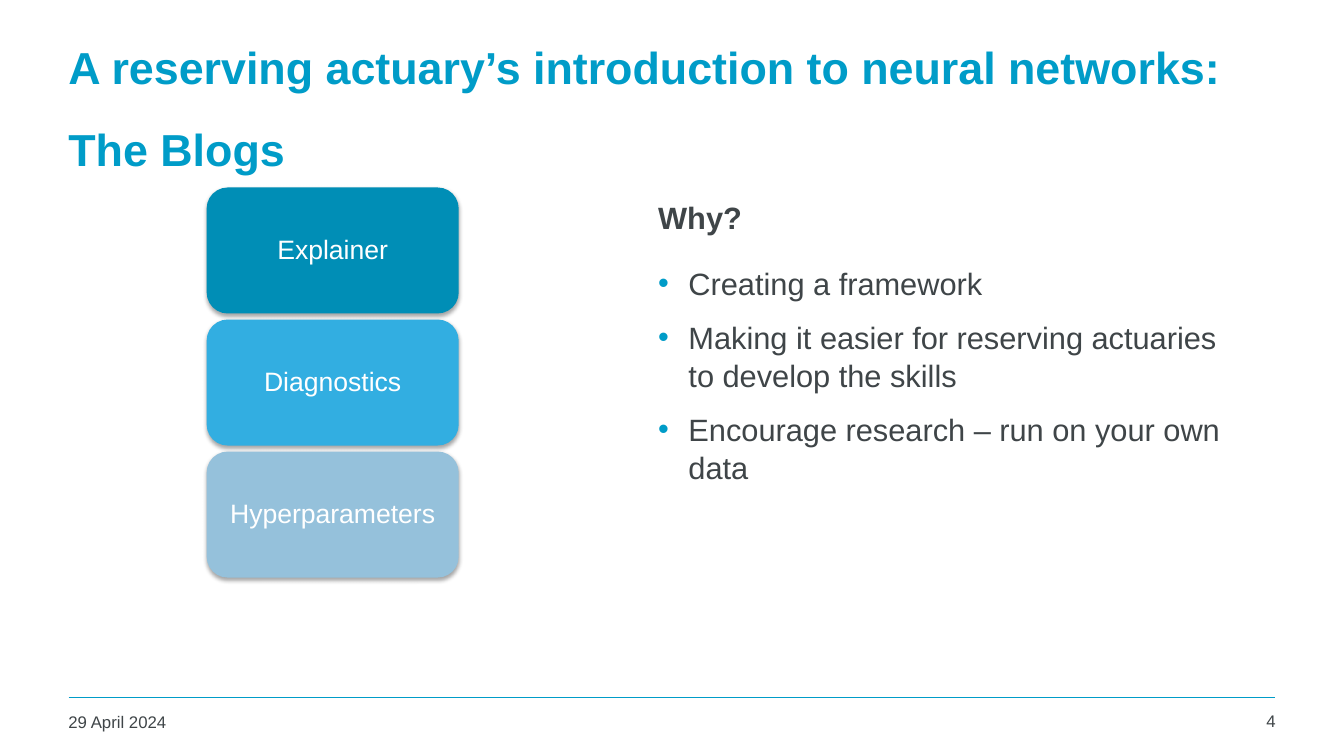
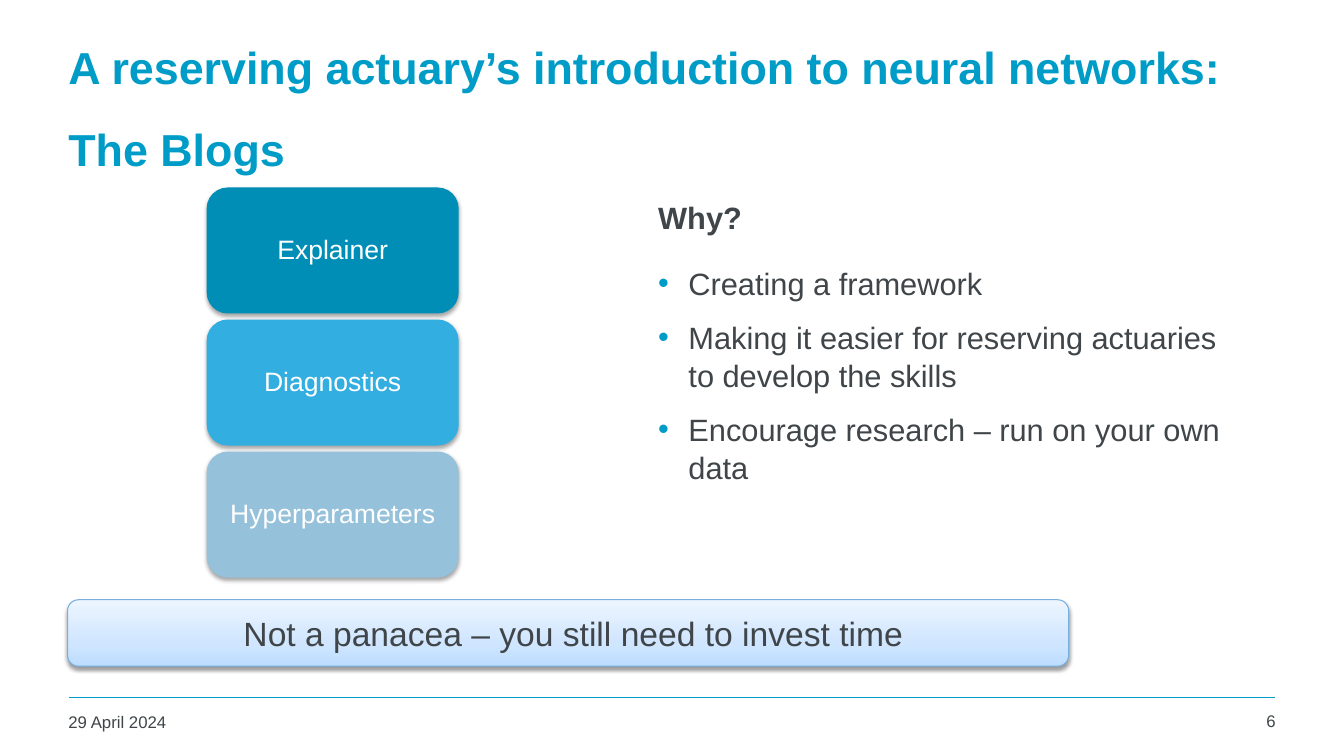
from lxml.etree import SubElement
from pptx import Presentation
from pptx.dml.color import RGBColor
from pptx.enum.shapes import MSO_CONNECTOR as Connector, MSO_SHAPE as Shape
from pptx.enum.text import MSO_ANCHOR as Anchor, PP_ALIGN as Align
from pptx.oxml.ns import qn
from pptx.util import Inches, Pt

COLOURS = {
    "accent": "009CC8", "text": "3F4548", "white": "FFFFFF", "shadow": "000000",
    "explainer": "008EB6", "diagnostics": "32AEE1", "hyperparameters": "95C1DB",
    "callout_line": "77AFDF",
    "callout_bottom": "BDDDFF", "callout_middle": "D0E6FF", "callout_top": "EDF5FF",
}
FONT = "Arial"
TITLE = ["A reserving actuary’s introduction to neural networks:", "The Blogs"]
BLOGS = [("Explainer", "explainer"), ("Diagnostics", "diagnostics"),
         ("Hyperparameters", "hyperparameters")]
REASONS = [
    "Creating a framework",
    "Making it easier for reserving actuaries to develop the skills",
    "Encourage research – run on your own data",
]


def colour(name):
    return RGBColor.from_string(COLOURS[name])


def inches(box):
    return [Inches(value) for value in box]


def style(paragraph, size, colour_name="text", bold=False, align=Align.LEFT):
    paragraph.alignment = align
    font = paragraph.font
    font.name, font.size, font.bold = FONT, Pt(size), bold
    font.color.rgb = colour(colour_name)


def add_text(slide, box, lines, size, colour_name="text", bold=False,
             align=Align.LEFT, anchor=Anchor.TOP, gap=0, bullets=False):
    text_frame = slide.shapes.add_textbox(*inches(box)).text_frame
    text_frame.word_wrap = True
    text_frame.vertical_anchor = anchor
    text_frame.text = "\n".join(lines)
    for index, paragraph in enumerate(text_frame.paragraphs):
        if bullets:
            add_bullet(paragraph)
        if index:
            paragraph.space_before = Pt(gap)
        style(paragraph, size, colour_name, bold, align)


def add_bullet(paragraph):
    paragraph.line_spacing = 1.04
    properties = paragraph._p.get_or_add_pPr()
    properties.set("marL", str(Inches(0.3)))
    properties.set("indent", str(Inches(-0.3)))
    bullet_colour = SubElement(properties, qn("a:buClr"))
    SubElement(bullet_colour, qn("a:srgbClr"), val=COLOURS["accent"])
    SubElement(properties, qn("a:buFont"), typeface=FONT)
    SubElement(properties, qn("a:buChar"), char="•")


def add_shadow(shape, opacity, distance):
    shape.shadow.inherit = False
    effects = shape.element.spPr.find(qn("a:effectLst"))
    shadow = SubElement(effects, qn("a:outerShdw"), blurRad=str(Pt(3.1)),
                        dist=str(Pt(distance)), dir="5400000", rotWithShape="0")
    tint = SubElement(shadow, qn("a:srgbClr"), val=COLOURS["shadow"])
    SubElement(tint, qn("a:alpha"), val=str(opacity * 1000))


def add_rounded_box(slide, box, text, size, colour_name):
    shape = slide.shapes.add_shape(Shape.ROUNDED_RECTANGLE, *inches(box))
    text_frame = shape.text_frame
    text_frame.word_wrap = True
    text_frame.vertical_anchor = Anchor.MIDDLE
    text_frame.text = text
    style(text_frame.paragraphs[0], size, colour_name, align=Align.CENTER)
    return shape


def add_blog_stack(slide, box):
    left, top, width, height = box
    gap = 0.06
    step = (height + gap) / len(BLOGS)
    for index, (label, fill) in enumerate(BLOGS):
        shape = add_rounded_box(slide, (left, top + index * step, width, step - gap),
                                label, 19, "white")
        shape.text_frame.paragraphs[0].line_spacing = 0.9
        shape.fill.solid()
        shape.fill.fore_color.rgb = colour(fill)
        shape.line.fill.background()
        add_shadow(shape, 35, 1.8)


def add_reasons(slide, box):
    left, top, width, height = box
    add_text(slide, (left, top, width, 0.7), ["Why?"], 22, bold=True,
             anchor=Anchor.BOTTOM)
    add_text(slide, (left, top + 0.87, width, height - 0.87), REASONS, 22,
             gap=11, bullets=True)


def add_callout(slide, box, text):
    shape = add_rounded_box(slide, box, text, 24, "text")
    shape.text_frame.margin_left = Inches(0.2)
    shape.fill.gradient()
    shape.fill.gradient_angle = 90
    stops = shape.element.spPr.find(qn("a:gradFill")).find(qn("a:gsLst"))
    stops.clear()
    for position, name in ((0, "callout_bottom"), (35, "callout_middle"),
                           (100, "callout_top")):
        stop = SubElement(stops, qn("a:gs"), pos=str(position * 1000))
        SubElement(stop, qn("a:srgbClr"), val=COLOURS[name])
    shape.line.color.rgb = colour("callout_line")
    shape.line.width = Pt(0.75)
    add_shadow(shape, 38, 1.6)


def add_footer(slide, number):
    rule = slide.shapes.add_connector(Connector.STRAIGHT,
                                      *inches((0.68, 6.92, 12.65, 6.92)))
    rule.line.color.rgb = colour("accent")
    rule.line.width = Pt(1)
    SubElement(rule.element.spPr, qn("a:effectLst"))
    add_text(slide, (0.58, 7.01, 2.94, 0.36), ["29 April 2024"], 12)
    add_text(slide, (11.81, 7, 0.94, 0.37), [str(number)], 12, align=Align.RIGHT)


def add_blogs_slide(presentation, number, callout=None):
    slide = presentation.slides.add_slide(presentation.slide_layouts[6])
    add_footer(slide, number)
    add_text(slide, (0.58, 0.44, 12, 1.25), TITLE, 32, "accent", bold=True,
             anchor=Anchor.MIDDLE, gap=20)
    add_reasons(slide, (6.43, 1.69, 5.89, 5.19))
    add_blog_stack(slide, (2.05, 1.86, 2.5, 3.87))
    if callout:
        add_callout(slide, (0.67, 5.95, 9.93, 0.66), callout)


def main():
    presentation = Presentation()
    presentation.slide_width = Inches(13.33)
    presentation.slide_height = Inches(7.5)
    add_blogs_slide(presentation, 4)
    add_blogs_slide(presentation, 6, "Not a panacea – you still need to invest time")
    presentation.save("out.pptx")


if __name__ == "__main__":
    main()
